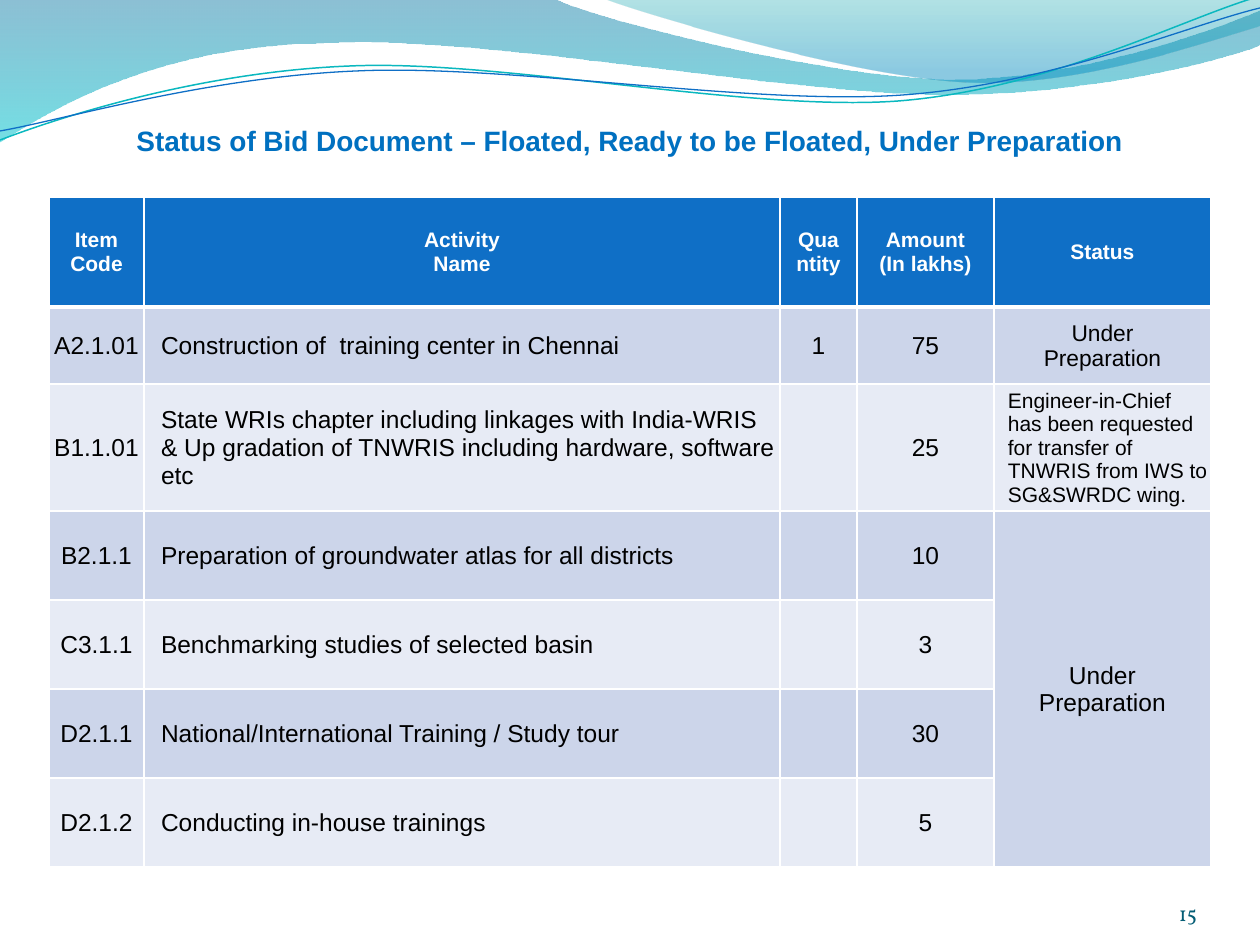
from itertools import chain, islice
from lxml.etree import SubElement
from pptx import Presentation
from pptx.dml.color import RGBColor
from pptx.enum.text import MSO_ANCHOR as Anchor, PP_ALIGN as Align
from pptx.oxml.ns import qn
from pptx.util import Emu, Pt

PX = 914400 / 126
TITLE = "Status of Bid Document – Floated, Ready to be Floated, Under Preparation"
PAGE_NUMBER = "15"
HEADERS = ["Item Code", "Activity\nName", "Quantity", "Amount\n(In lakhs)", "Status"]
PENDING = "Under\nPreparation"
ROWS = [
    ("A2.1.01", "Construction of  training center in Chennai", "1", "75", PENDING),
    ("B1.1.01", "State WRIs chapter including linkages with India-WRIS & Up gradation of "
     "TNWRIS including hardware, software etc", "", "25",
     "Engineer-in-Chief has been requested for transfer of TNWRIS from IWS to SG&SWRDC wing."),
    ("B2.1.1", "Preparation of groundwater atlas for all districts", "", "10", PENDING),
    ("C3.1.1", "Benchmarking studies of selected basin", "", "3", ""),
    ("D2.1.1", "National/International Training / Study tour", "", "30", ""),
    ("D2.1.2", "Conducting in-house trainings", "", "5", ""),
]
COLUMN_WIDTHS = [95, 636, 77, 137, 217]
ROW_HEIGHTS = [110, 77, 89, 89, 89, 89, 89]
STATUS_SIZES = {1: 13, 2: 12}
INDENTS = {(2, 4): 13, **{(row, 1): 16 for row in range(1, 7)}}
HEADER_FILL, BAND_FILLS = "0F6FC6", ("E7EBF5", "CCD5EA")
BANDS = [
    ([(0, 0), [(554, -1)], [(600, 21), (837, 79), (955, 79)],
      [(1075, 79), (1207, 33), (1260, 11)], [(1261, 45)],
      [(1239, 55), (1096, 96), (940, 94)], [(784, 94), (481, 35), (324, 43)],
      [(163, 45), (58, 105), (-1, 142)], [(0, 0)]],
     [(0, "0074A1", 45), (1, "00C6CF", 55)]),
    ([(604, -1), [(641, 14), (859, 78), (969, 82)],
      [(1079, 87), (1211, 40), (1260, 26)], [(1260, 0)], [(604, -1)]],
     [(0, "00A1A9", 30), (0.8, "008BBF", 45)]),
]
STRANDS = [
    ([(0, 140), [(60, 117), (199, 72), (349, 66)], [(498, 59), (747, 112), (898, 101)],
      [(1050, 89), (1182, 19), (1257, -3)]], "0AB8BF", 0.85),
    ([(0, 131), [(59, 121), (207, 77), (357, 71)], [(508, 64), (752, 106), (903, 95)],
      [(1053, 84), (1186, 26), (1260, 8)]], "0F6FC6", 0.75),
]


def px(length):
    """Turn pixels into EMU."""
    return Emu(round(length * PX))


def color(value):
    """Turn a hex string into a colour."""
    return RGBColor.from_string(value)


def format_text(frame, value, size, tint, font="Arial", align=Align.CENTER, bold=False):
    """Write text into a frame with one look."""
    frame.text = value
    for para in frame.paragraphs:
        para.alignment = align
        for span in para.runs:
            for name, setting in {"name": font, "size": Pt(size), "bold": bold}.items():
                setattr(span.font, name, setting)
            span.font.color.rgb = color(tint)


def add_text(page, place, value, size, tint, top=0, **look):
    """Add a bottom-anchored text box."""
    frame = page.shapes.add_textbox(*map(px, place)).text_frame
    settings = {"word_wrap": True, "vertical_anchor": Anchor.BOTTOM, "margin_left": 0,
                "margin_right": 0, "margin_top": px(top), "margin_bottom": 0}
    for name, setting in settings.items():
        setattr(frame, name, setting)
    format_text(frame, value, size, tint, **look)


def add_wave(page, outline, close):
    """Add a freeform whose three-point segments are Bezier curves."""
    start, *segments = outline
    builder = page.shapes.build_freeform(*map(px, start))
    points = [(px(x), px(y)) for x, y in chain.from_iterable(segments)]
    builder.add_line_segments(points, close=close)
    wave = builder.convert_to_shape()
    wave.shadow.inherit = False
    nodes = iter(list(wave._element.iter(qn("a:lnTo"))))
    for segment in segments:
        first, *others = islice(nodes, len(segment))
        if others:
            first.tag = qn("a:cubicBezTo")
        for node in others:
            first.append(node[0])
            node.getparent().remove(node)
    return wave


def add_waves(page):
    """Draw the gradient bands and the thin strands."""
    for outline, stops in BANDS:
        band = add_wave(page, outline, True)
        band.line.fill.background()
        band.fill.gradient()
        band.fill.gradient_angle = 270
        for stop, (position, tint, _) in zip(band.fill.gradient_stops, stops):
            stop.position = position
            stop.color.rgb = color(tint)
        tints = band._element.spPr.iter(qn("a:srgbClr"))
        for node, (_, _, opacity) in zip(tints, stops):
            SubElement(node, qn("a:alpha"), val=str(opacity * 1000))
    for outline, tint, width in STRANDS:
        strand = add_wave(page, outline, False)
        strand.fill.background()
        strand.line.color.rgb = color(tint)
        strand.line.width = Pt(width)


def add_borders(cell, bottom):
    """Give a cell white borders."""
    properties = cell._tc.get_or_add_tcPr()
    for side, width in {"lnL": 1, "lnR": 1, "lnT": 1, "lnB": bottom}.items():
        edge = SubElement(properties, qn(f"a:{side}"), w=str(Pt(width)))
        SubElement(SubElement(edge, qn("a:solidFill")), qn("a:srgbClr"), val="FFFFFF")


def add_status_table(page):
    """Build the table of bid items."""
    place = (49, 197, sum(COLUMN_WIDTHS), sum(ROW_HEIGHTS))
    table = page.shapes.add_table(len(ROW_HEIGHTS), len(COLUMN_WIDTHS), *map(px, place)).table
    for column, width in zip(table.columns, COLUMN_WIDTHS):
        column.width = px(width)
    for line, height in zip(table.rows, ROW_HEIGHTS):
        line.height = px(height)
    for row, values in enumerate([HEADERS, *ROWS]):
        header = row == 0
        for column, value in enumerate(values):
            cell = table.cell(row, column)
            add_borders(cell, 3 if header else 1)
            cell.fill.solid()
            cell.fill.fore_color.rgb = color(HEADER_FILL if header else BAND_FILLS[row % 2])
            cell.vertical_anchor = Anchor.MIDDLE
            if not header:
                for side in ("left", "top", "right"):
                    setattr(cell, f"margin_{side}", px(1))
                cell.margin_bottom = 0
            size = 12 if header else STATUS_SIZES.get(row, 14) if column == 4 else 14
            indent = INDENTS.get((row, column))
            format_text(cell.text_frame, value, size, "FFFFFF" if header else "000000",
                        align=Align.LEFT if indent else Align.CENTER, bold=header)
            if indent:
                cell.text_frame.paragraphs[0]._p.get_or_add_pPr().set("marL", str(px(indent)))
    table.cell(3, 4).merge(table.cell(6, 4))


def main():
    """Build the slide and save it."""
    deck = Presentation()
    deck.slide_width, deck.slide_height = px(1260), px(945)
    page = deck.slides.add_slide(deck.slide_layouts[6])
    add_waves(page)
    add_text(page, (1092, 876, 105, 50), PAGE_NUMBER, 12, "045D75",
             font="Vollkorn", align=Align.RIGHT)
    add_status_table(page)
    add_text(page, (49, 113, 1162, 44), TITLE, 16, "0070C0", top=6, bold=True)
    deck.save("out.pptx")


if __name__ == "__main__":
    main()
